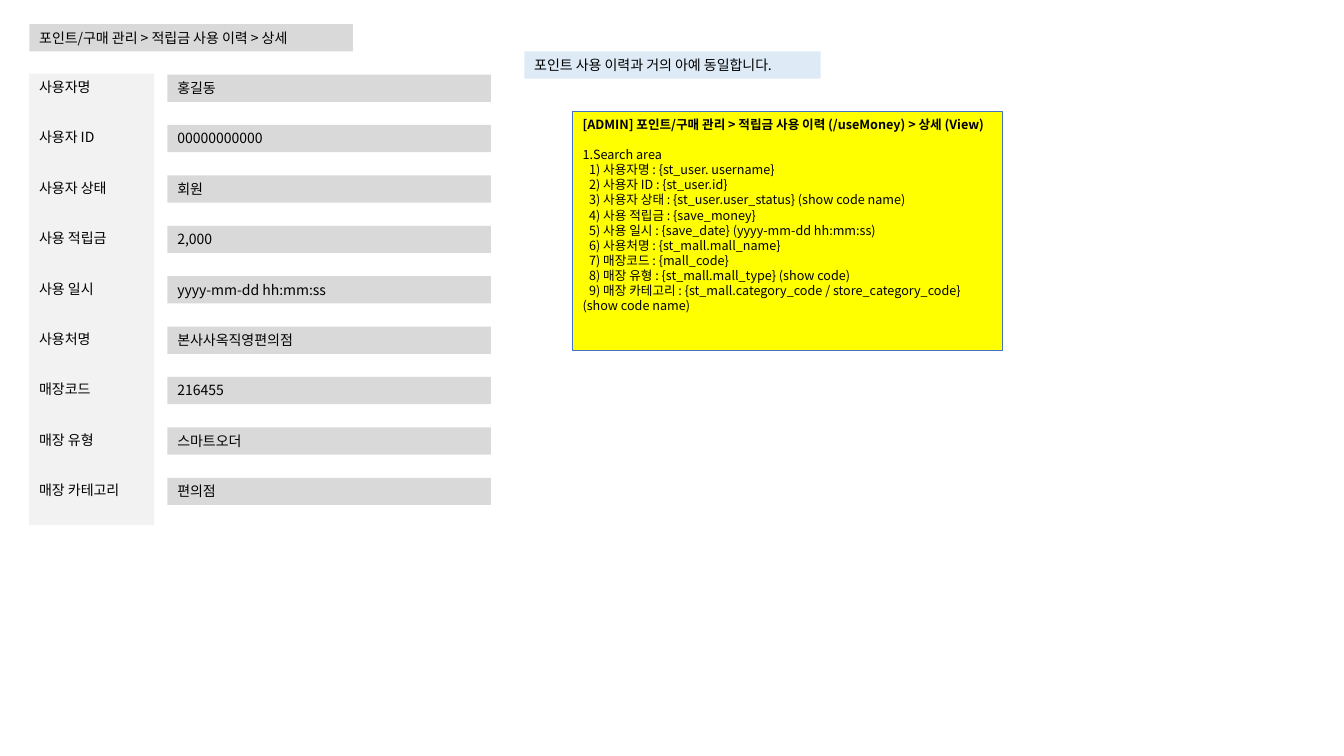
import lxml.etree
import pptx
import pptx.dml.color
import pptx.enum.shapes
import pptx.enum.text
import pptx.oxml.ns
import pptx.util


def colour(hex_value):
    """Turn a hex string into a colour."""
    return pptx.dml.color.RGBColor.from_string(hex_value)


class Wireframe:
    """Draws admin screen parts on a slide ruled in cells of a tenth of an inch."""

    CELL = 0.1
    FONT = "Noto Sans CJK KR"
    BAR_HEIGHT = 2.7
    LINE_FACTOR = 1.2

    def __init__(self, slide):
        """Keep the slide to draw on."""
        self.slide = slide

    def cells(self, count):
        """Convert grid cells to a length."""
        return pptx.util.Inches(count * self.CELL)

    def panel(self, column, row, columns, rows, fill, border=None):
        """Add a filled rectangle and return its text frame."""
        shape = self.slide.shapes.add_shape(
            pptx.enum.shapes.MSO_SHAPE.RECTANGLE,
            *map(self.cells, (column, row, columns, rows)))
        shape.shadow.inherit = False
        shape.fill.solid()
        shape.fill.fore_color.rgb = colour(fill)
        if border:
            shape.line.color.rgb = colour(border)
            shape.line.width = pptx.util.Pt(0.75)
        else:
            shape.line.fill.background()
        frame = shape.text_frame
        frame.word_wrap = True
        frame.vertical_anchor = pptx.enum.text.MSO_ANCHOR.TOP
        return frame

    def set_lines(self, frame, lines, size=10, gap=0):
        """Fill a frame with left-aligned paragraphs and return them."""
        frame.text = "\n".join(lines)
        for paragraph in frame.paragraphs:
            paragraph.alignment = pptx.enum.text.PP_ALIGN.LEFT
            paragraph.line_spacing = pptx.util.Pt(size * self.LINE_FACTOR)
            paragraph.space_after = pptx.util.Pt(gap)
            paragraph.font.size = pptx.util.Pt(size)
            paragraph.font.name = self.FONT
            paragraph.font.color.rgb = colour("000000")
            defaults = paragraph._p.pPr.find(pptx.oxml.ns.qn("a:defRPr"))
            east_asian = lxml.etree.SubElement(defaults, pptx.oxml.ns.qn("a:ea"))
            east_asian.set("typeface", self.FONT)
        return frame.paragraphs

    def bar(self, column, row, columns, text, fill="D9D9D9"):
        """Add a one-line bar."""
        self.set_lines(self.panel(column, row, columns, self.BAR_HEIGHT, fill), [text])

    def form(self, fields, column, row, pitch):
        """Add a label column with a value bar beside each label."""
        labels = self.panel(column, row, 12.4, 44.8, "F2F2F2")
        self.set_lines(labels, [label for label, _ in fields],
                       gap=pitch * self.CELL * 72 - 10 * self.LINE_FACTOR)
        for index, (_, value) in enumerate(fields):
            self.bar(column + 13.7, row + 0.1 + index * pitch, 32.1, value)

    def memo(self, column, row, columns, rows, title, heading, items):
        """Add a bordered memo with a bold title and numbered items."""
        frame = self.panel(column, row, columns, rows, "FFFF00", "4472C4")
        numbered = [f"{number}) {item}" for number, item in enumerate(items, 1)]
        paragraphs = self.set_lines(frame, [title, heading, *numbered], size=9)
        paragraphs[0].font.bold = True
        paragraphs[0].space_after = pptx.util.Pt(9 * self.LINE_FACTOR)
        for paragraph in paragraphs[2:]:
            paragraph._p.pPr.set("indent", str(pptx.util.Pt(4.7)))


FIELDS = [
    ("사용자명", "홍길동"),
    ("사용자 ID", "00000000000"),
    ("사용자 상태", "회원"),
    ("사용 적립금", "2,000"),
    ("사용 일시", "yyyy-mm-dd hh:mm:ss"),
    ("사용처명", "본사사옥직영편의점"),
    ("매장코드", "216455"),
    ("매장 유형", "스마트오더"),
    ("매장 카테고리", "편의점"),
]

SOURCES = [
    "{st_user. username}",
    "{st_user.id}",
    "{st_user.user_status} (show code name)",
    "{save_money}",
    "{save_date} (yyyy-mm-dd hh:mm:ss)",
    "{st_mall.mall_name}",
    "{mall_code}",
    "{st_mall.mall_type} (show code)",
    "{st_mall.category_code / store_category_code} (show code name)",
]


def main():
    """Build and save the detail screen slide."""
    deck = pptx.Presentation()
    deck.slide_width = pptx.util.Inches(13.33)
    deck.slide_height = pptx.util.Inches(7.5)
    screen = Wireframe(deck.slides.add_slide(deck.slide_layouts[6]))

    breadcrumb = "포인트/구매 관리 > 적립금 사용 이력 > 상세"
    screen.bar(2.9, 2.4, 32.1, breadcrumb)
    screen.form(FIELDS, column=2.9, row=7.3, pitch=5)
    screen.bar(52, 5.1, 29.4, "포인트 사용 이력과 거의 아예 동일합니다.", "DEEBF7")
    screen.memo(
        56.8, 11.1, 42.6, 23.7,
        "[ADMIN] 포인트/구매 관리 > 적립금 사용 이력 (/useMoney) > 상세 (View)",
        "1.Search area",
        [f"{label} : {source}" for (label, _), source in zip(FIELDS, SOURCES)])

    deck.save("out.pptx")


if __name__ == "__main__":
    main()
